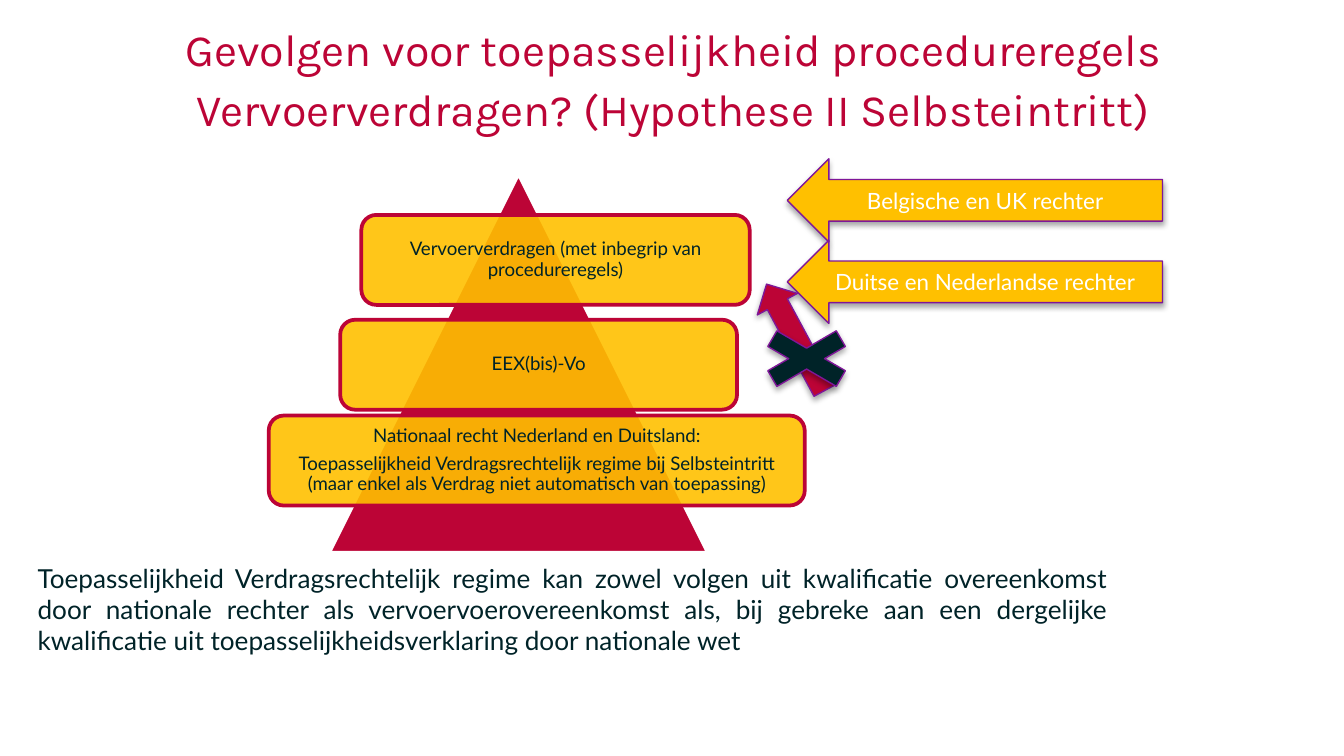
from lxml import etree
from pptx import Presentation, util as u
from pptx.dml.color import RGBColor
from pptx.enum import shapes, text
from pptx.oxml.ns import qn

THEME = dict(
    red="BC0436", gold="FFC000", ink="002328", white="FFFFFF", plum="7F1699",
    head="Karla", body="Lato", title=24, note=14, label=12, card=10,
)
KIND = shapes.MSO_SHAPE
MID = text.PP_ALIGN.CENTER

TITLE = ("Gevolgen voor toepasselijkheid procedureregels "
         "Vervoerverdragen? (Hypothese II Selbsteintritt)")
NOTE = ("Toepasselijkheid Verdragsrechtelijk regime kan zowel volgen uit kwalificatie "
        "overeenkomst door nationale rechter als vervoervoerovereenkomst als, bij gebreke "
        "aan een dergelijke kwalificatie uit toepasselijkheidsverklaring door nationale wet")
CARDS = [
    (6.83, 4.06, 7.34, ["Vervoerverdragen (met inbegrip van procedureregels)"]),
    (6.43, 6.04, 7.5, ["EEX(bis)-Vo"]),
    (5.08, 7.85, 10.13, [
        "Nationaal recht Nederland en Duitsland:",
        "Toepasselijkheid Verdragsrechtelijk regime bij Selbsteintritt "
        "(maar enkel als Verdrag niet automatisch van toepassing)"]),
]
COURTS = ["Belgische en UK rechter", "Duitse en Nederlandse rechter"]


def tint(name):
    return RGBColor.from_string(THEME[name])


def write(frame, lines, size, color, align=MID, face="body", after=0):
    frame.word_wrap = True
    for i, line in enumerate(lines):
        para = frame.paragraphs[0] if i == 0 else frame.add_paragraph()
        para.alignment = align
        para.space_after = u.Pt(after)
        run = para.add_run()
        run.text = line
        run.font.size = u.Pt(THEME[size])
        run.font.name = THEME[face]
        run.font.color.rgb = tint(color)


def inset(frame, gap):
    frame.margin_left = frame.margin_right = u.Cm(gap)
    frame.margin_top = frame.margin_bottom = u.Cm(gap)


def draw(slide, kind, box, fill, line, width):
    shape = slide.shapes.add_shape(kind, *map(u.Cm, box))
    shape.fill.solid()
    shape.fill.fore_color.rgb = tint(fill)
    shape.line.color.rgb = tint(line)
    shape.line.width = u.Pt(width)
    shape.shadow.inherit = False
    shape.text_frame.vertical_anchor = text.MSO_ANCHOR.MIDDLE
    return shape


def raised(slide, kind, box, fill):
    shape = draw(slide, kind, box, fill, "plum", 0.75)
    effect = shape._element.spPr.find(qn("a:effectLst"))
    shade = etree.SubElement(effect, qn("a:outerShdw"), blurRad="40000", dist="23000",
                             dir="5400000", rotWithShape="0")
    color = etree.SubElement(shade, qn("a:srgbClr"), val="000000")
    etree.SubElement(color, qn("a:alpha"), val="35000")
    return shape


def card(slide, left, top, width, lines):
    shape = draw(slide, KIND.ROUNDED_RECTANGLE, (left, top, width, 1.7), "gold", "red", 2)
    color = shape._element.spPr.find(qn("a:solidFill"))[0]
    etree.SubElement(color, qn("a:alpha"), val="90000")
    inset(shape.text_frame, 0.1)
    write(shape.text_frame, lines, "card", "ink", after=4.2)
    for para in shape.text_frame.paragraphs:
        para.line_spacing = 0.9


def main():
    deck = Presentation()
    deck.slide_width, deck.slide_height = u.Cm(25.4), u.Cm(14.28)
    slide = deck.slides.add_slide(deck.slide_layouts[5])

    title = slide.shapes.title
    title.left, title.top, title.width, title.height = map(u.Cm, (1.37, 0.3, 22.71, 1.6))
    frame = title.text_frame
    frame.auto_size = text.MSO_AUTO_SIZE.NONE
    frame.vertical_anchor = text.MSO_ANCHOR.TOP
    inset(frame, 0)
    write(frame, [TITLE], "title", "red", face="head")
    frame.paragraphs[0].line_spacing = u.Pt(32)

    draw(slide, KIND.ISOSCELES_TRIANGLE, (6.22, 3.28, 7.16, 7.16), "red", "white", 2)
    for item in CARDS:
        card(slide, *item)

    note = slide.shapes.add_textbox(*map(u.Cm, (0.46, 10.49, 20.73, 2.06)))
    write(note.text_frame, [NOTE], "note", "ink", text.PP_ALIGN.JUSTIFY)

    for i, court in enumerate(COURTS):
        arrow = raised(slide, KIND.LEFT_ARROW, (14.88, 3 + 1.54 * i, 7.09, 1.57), "gold")
        write(arrow.text_frame, [court], "label", "white")

    climb = raised(slide, KIND.UP_ARROW, (14.6, 5.23, 0.86, 2.29), "red")
    climb.rotation = 331.7
    raised(slide, KIND.MATH_MULTIPLY, (14, 6.05, 2.49, 1.45), "ink")

    deck.save("out.pptx")


if __name__ == "__main__":
    main()
